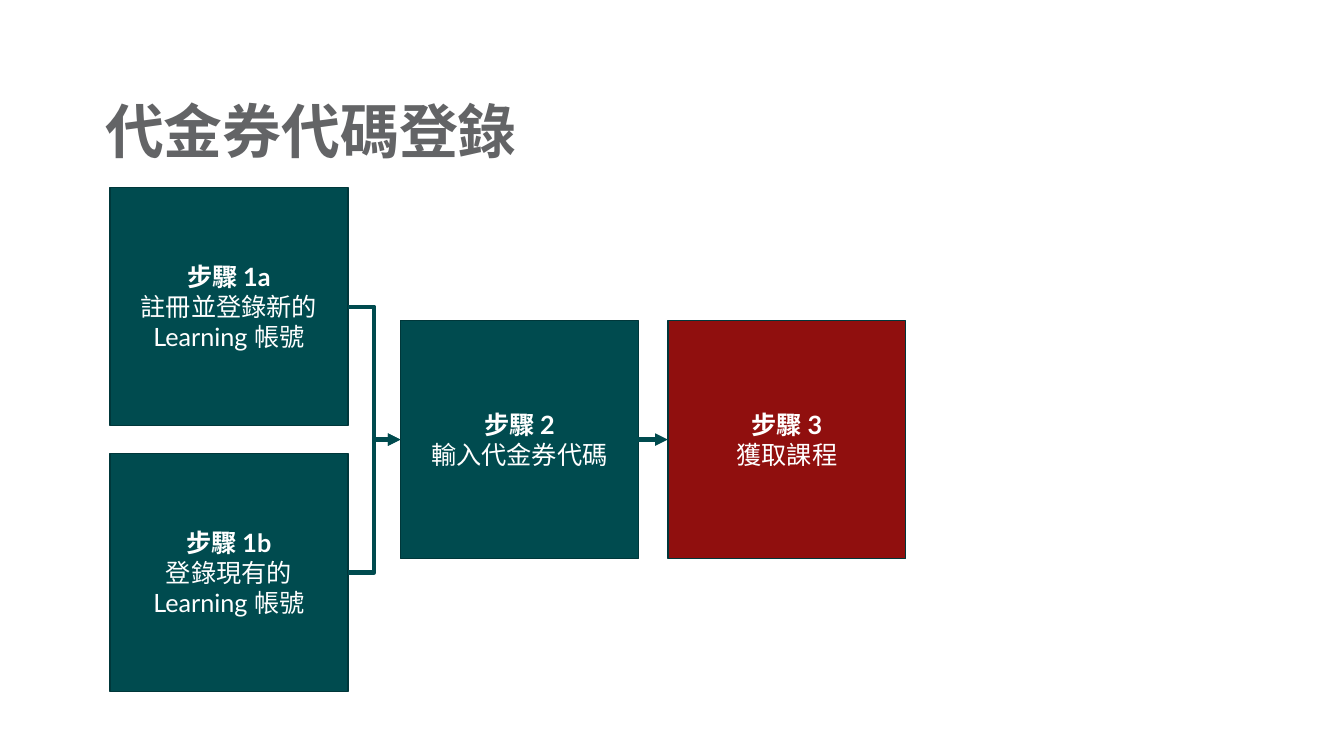
from lxml import etree
from pptx import Presentation
from pptx.dml.color import RGBColor
from pptx.enum import shapes, text
from pptx.oxml import ns
from pptx.util import Pt

COLORS = {
    "background": "FFFFFF",
    "title": "636466",
    "teal": "004B4F",
    "outline": "00373A",
    "red": "900F0E",
    "white": "FFFFFF",
}
FONT = "Lato"
BOX_SIZE = 170
ROW_GAP = 20
BRANCH_GAP = 37.5
STEP_GAP = 21
RIGHT_SITE, LEFT_SITE = 3, 1


def color(name):
    return RGBColor.from_string(COLORS[name])


def write_text(paragraph, content, *, size, fill, bold=False, align=None, spacing=None):
    paragraph.text = content
    paragraph.alignment = align
    paragraph.line_spacing = spacing
    for run in paragraph.runs:
        run.font.name = FONT
        run.font.size = Pt(size)
        run.font.bold = bold
        run.font.color.rgb = color(fill)


def place_title(slide, left, top, width, height, content):
    title = slide.shapes.title
    title.left, title.top, title.width, title.height = map(Pt, (left, top, width, height))
    frame = title.text_frame
    frame.word_wrap = True
    frame.auto_size = text.MSO_AUTO_SIZE.NONE
    frame.vertical_anchor = text.MSO_ANCHOR.MIDDLE
    frame.margin_left = 0
    write_text(frame.paragraphs[0], content, size=42, fill="title", bold=True,
               align=text.PP_ALIGN.LEFT, spacing=0.9)


def add_step(slide, left, top, heading, body, fill="teal"):
    shape = slide.shapes.add_shape(shapes.MSO_SHAPE.RECTANGLE, Pt(left), Pt(top),
                                   Pt(BOX_SIZE), Pt(BOX_SIZE))
    shape.shadow.inherit = False
    shape.fill.solid()
    shape.fill.fore_color.rgb = color(fill)
    shape.line.color.rgb = color("outline")
    shape.line.width = Pt(1)
    frame = shape.text_frame
    frame.word_wrap = True
    frame.vertical_anchor = text.MSO_ANCHOR.MIDDLE
    style = {"size": 18, "fill": "white", "align": text.PP_ALIGN.CENTER}
    write_text(frame.paragraphs[0], heading, bold=True, **style)
    write_text(frame.add_paragraph(), body, **style)
    return shape


def add_arrow(slide, source, target, kind):
    connector = slide.shapes.add_connector(kind, 0, 0, 0, 0)
    connector.begin_connect(source, RIGHT_SITE)
    connector.end_connect(target, LEFT_SITE)
    connector.line.color.rgb = color("teal")
    connector.line.width = Pt(3)
    etree.SubElement(connector.line._get_or_add_ln(), ns.qn("a:tailEnd"), type="triangle")
    etree.SubElement(connector._element.spPr, ns.qn("a:effectLst"))


def add_flow(slide, left, top):
    row_step = BOX_SIZE + ROW_GAP
    middle = top + row_step / 2
    entry_left = left + BOX_SIZE + BRANCH_GAP
    course_left = entry_left + BOX_SIZE + STEP_GAP
    register = add_step(slide, left, top, "步驟 1a", "註冊並登錄新的\vLearning 帳號")
    enter_code = add_step(slide, entry_left, middle, "步驟 2", "輸入代金券代碼")
    sign_in = add_step(slide, left, top + row_step, "步驟 1b", "登錄現有的Learning 帳號")
    get_course = add_step(slide, course_left, middle, "步驟 3", "獲取課程", fill="red")
    for account in (sign_in, register):
        add_arrow(slide, account, enter_code, shapes.MSO_CONNECTOR.ELBOW)
    add_arrow(slide, enter_code, get_course, shapes.MSO_CONNECTOR.STRAIGHT)


def main():
    presentation = Presentation()
    presentation.slide_width, presentation.slide_height = Pt(960), Pt(540)
    slide = presentation.slides.add_slide(presentation.slide_layouts[5])
    slide.background.fill.solid()
    slide.background.fill.fore_color.rgb = color("background")
    place_title(slide, 75, 71, 695.5, 50.5, "代金券代碼登錄")
    add_flow(slide, 78.5, 134)
    presentation.save("out.pptx")


if __name__ == "__main__":
    main()
